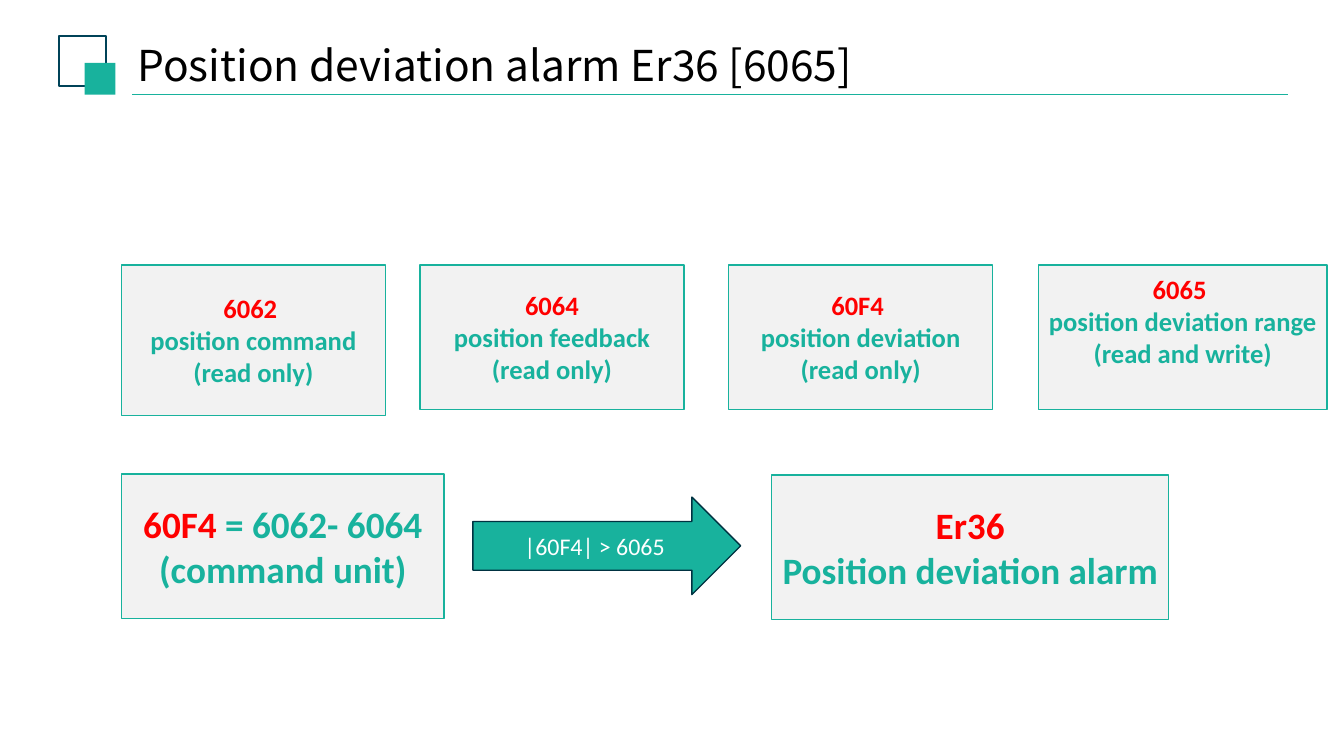
import dataclasses
import pptx
import pptx.dml.color
import pptx.enum.shapes
import pptx.enum.text
import pptx.oxml.ns
import pptx.util
from lxml import etree

PX = 9525  # EMU in one px, 96 px to the inch
HUES = {
    "teal": "18B29D",
    "navy": "004358",
    "edge": "003241",
    "pale": "F2F2F2",
    "red": "FF0000",
    "black": "000000",
    "white": "FFFFFF",
}
KINDS = pptx.enum.shapes.MSO_SHAPE
ALIGN = pptx.enum.text.PP_ALIGN
Run = tuple[str, str]  # text, hue
Line = list[Run]


@dataclasses.dataclass
class Box:
    left: int
    top: int
    wide: int
    high: int
    size: int
    lines: list[Line]
    kind: KINDS = KINDS.RECTANGLE
    fill: str | None = "pale"
    edge: str | None = "teal"
    pen: float = 1
    bold: bool = True
    foot: int = 5  # bottom inset


def emu(px: int) -> pptx.util.Emu:
    return pptx.util.Emu(px * PX)


def hue(name: str) -> pptx.dml.color.RGBColor:
    return pptx.dml.color.RGBColor.from_string(HUES[name])


def write(frame, lines: list[Line], size: int, font: str,
          bold: bool, align: ALIGN) -> None:
    for num, line in enumerate(lines):
        para = frame.add_paragraph() if num else frame.paragraphs[0]
        para.alignment = align
        for text, tint in line:
            run = para.add_run()
            run.text = text
            run.font.name = font
            run.font.size = pptx.util.Pt(size)
            run.font.bold = bold
            run.font.color.rgb = hue(tint)


def inset(frame, side: int, head: int, foot: int) -> None:
    frame.margin_left = frame.margin_right = emu(side)
    frame.margin_top, frame.margin_bottom = emu(head), emu(foot)
    frame.vertical_anchor = pptx.enum.text.MSO_ANCHOR.MIDDLE
    frame.word_wrap = True


def draw(slide, box: Box) -> None:
    shape = slide.shapes.add_shape(
        box.kind, emu(box.left), emu(box.top), emu(box.wide), emu(box.high))
    shape.shadow.inherit = False
    if box.fill:
        shape.fill.solid()
        shape.fill.fore_color.rgb = hue(box.fill)
    else:
        shape.fill.background()
    if box.edge:
        shape.line.color.rgb = hue(box.edge)
        shape.line.width = pptx.util.Pt(box.pen)
    else:
        shape.line.fill.background()
    inset(shape.text_frame, 9, 5, box.foot)
    write(shape.text_frame, box.lines, box.size, "Calibri", box.bold, ALIGN.CENTER)


def rule(slide, left: int, right: int, top: int) -> None:
    line = slide.shapes.add_connector(
        pptx.enum.shapes.MSO_CONNECTOR.STRAIGHT,
        emu(left), emu(top), emu(right), emu(top))
    line.line.color.rgb = hue("teal")
    line.line.width = pptx.util.Pt(1.25)
    props = line.element.find(pptx.oxml.ns.qn("p:spPr"))
    etree.SubElement(props, pptx.oxml.ns.qn("a:effectLst"))


def head(slide, text: str) -> None:
    title = slide.shapes.title
    title.left, title.top = emu(138), emu(39)
    title.width, title.height = emu(794), emu(52)
    frame = title.text_frame
    frame.auto_size = pptx.enum.text.MSO_AUTO_SIZE.NONE
    inset(frame, 0, 0, 0)
    write(frame, [[(text, "black")]], 32, "Noto Sans CJK SC", False, ALIGN.LEFT)


def card(left: int, wide: int, high: int, code: str, name: str,
         mode: str, foot: int = 5) -> Box:
    lines = [[(code, "red")], [(name, "teal")], [(mode, "teal")]]
    return Box(left, 266, wide, high, 20, lines, foot=foot)


# Corner mark
MARK = [
    Box(59, 36, 48, 50, 18, [], fill=None, edge="navy", pen=1.5),
    Box(85, 63, 31, 32, 18, [], fill="teal", edge=None),
]

# Object codes; the last one sits a line higher
CARDS = [
    card(122, 265, 151, "6062 ", "position command", "(read only)"),
    card(422, 265, 145, "6064", "position feedback", "(read only)"),
    card(732, 265, 145, "60F4 ", "position deviation", "(read only)"),
    card(1043, 290, 145, "6065 ", "position deviation range",
         "(read and write)", foot=37),
]

# Formula, test and alarm
FLOW = [
    Box(122, 476, 324, 145, 28, [
        [("60F4", "red"), (" = 6062- 6064", "teal")],
        [("(command unit)", "teal")]]),
    Box(475, 499, 269, 98, 18, [[("|60F4| > 6065", "white")]],
        kind=KINDS.RIGHT_ARROW, fill="teal", edge="edge", bold=False),
    Box(775, 477, 399, 145, 28, [
        [("Er36", "red")],
        [("Position deviation alarm", "teal")]]),
]


def main() -> None:
    deck = pptx.Presentation()
    deck.slide_width, deck.slide_height = emu(1350), emu(759)
    slide = deck.slides.add_slide(deck.slide_layouts[5])
    head(slide, "Position deviation alarm Er36 [6065]")
    rule(slide, 133, 1294, 95)
    for box in MARK + CARDS + FLOW:
        draw(slide, box)
    deck.save("out.pptx")


if __name__ == "__main__":
    main()
